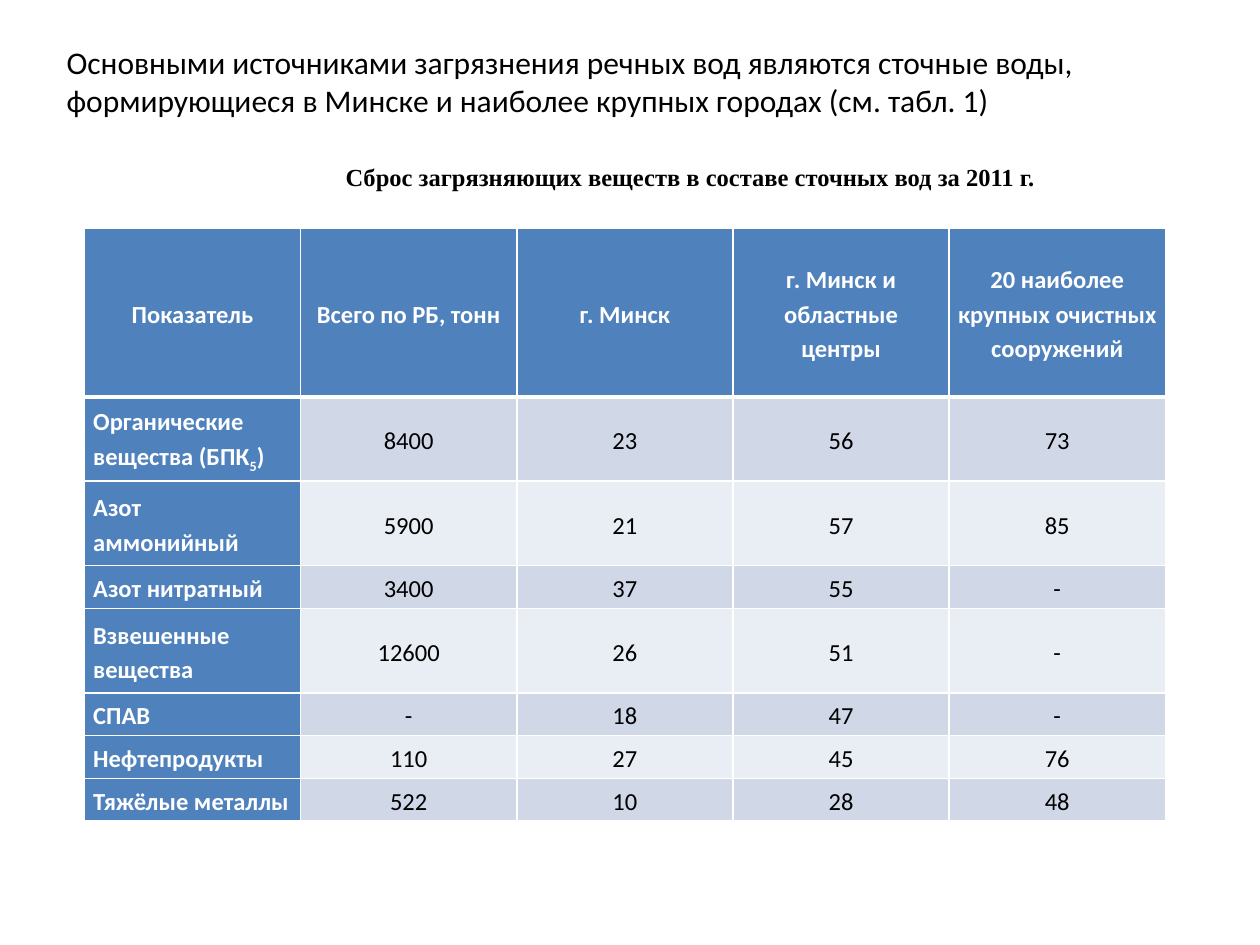
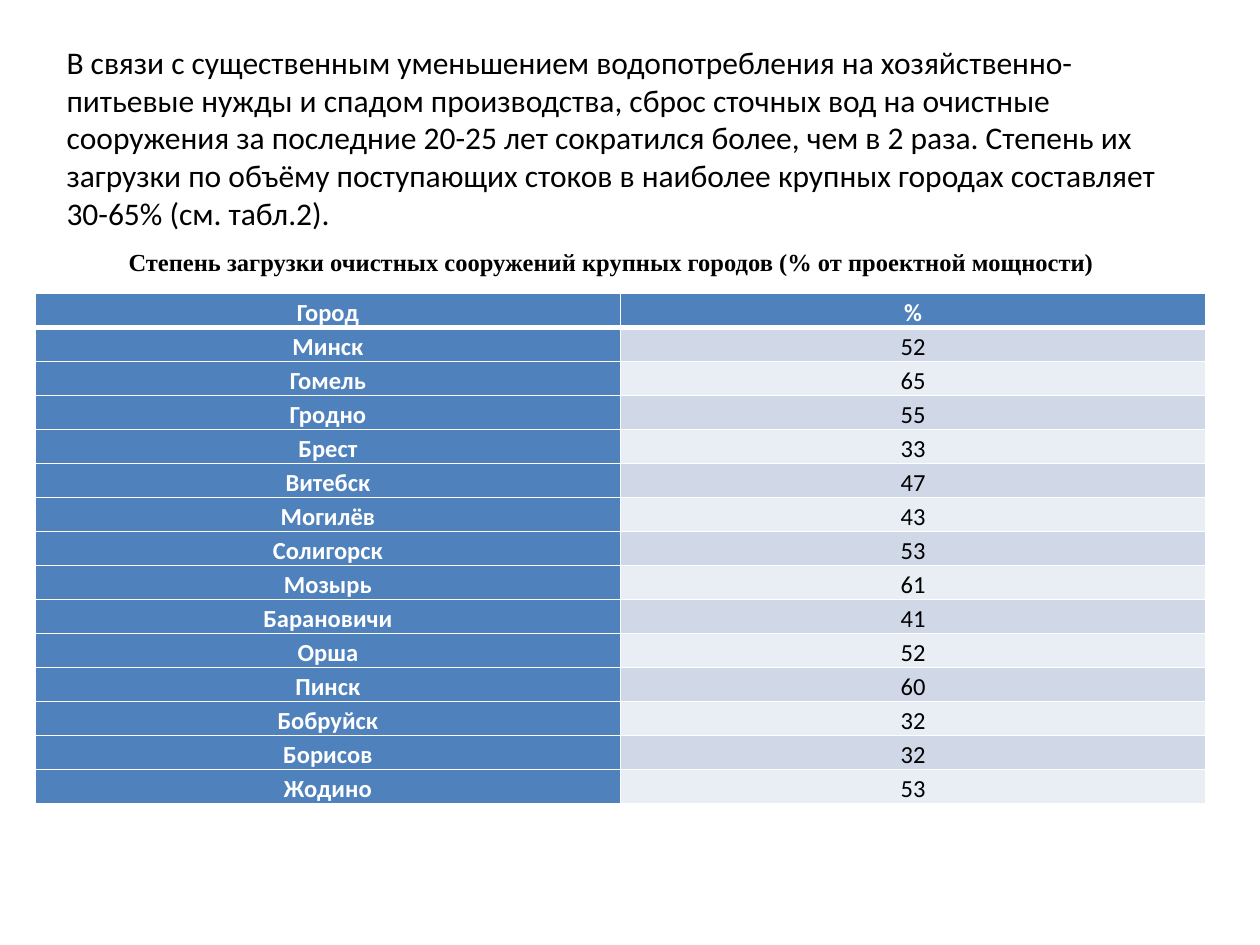
from dataclasses import dataclass

from lxml.etree import SubElement
from pptx import Presentation
from pptx.dml.color import RGBColor
from pptx.enum.text import MSO_ANCHOR as Anchor, MSO_AUTO_SIZE as AutoSize, PP_ALIGN as Align
from pptx.oxml.ns import qn
from pptx.util import Inches, Pt

COLORS = {
    "page": "FFFFFF",
    "text": "000000",
    "header": "4F81BD",
    "header_text": "FFFFFF",
    "band_dark": "D0D8E8",
    "band_light": "E9EDF4",
    "border": "FFFFFF",
}
BODY_FONT = "Calibri"
CAPTION_FONT = "Times New Roman"
LEAD_SIZE = 18
TABLE_SIZE = 14
LINE_SPACING = 1.15
SUBSCRIPT_MARK = "~"


@dataclass(frozen=True)
class Area:
    left: float
    top: float
    width: float
    height: float

    def lengths(self):
        return tuple(Inches(n) for n in (self.left, self.top, self.width, self.height))


@dataclass(frozen=True)
class Caption:
    text: str
    area: Area
    align: Align
    anchor: Anchor
    top_inset: float


@dataclass(frozen=True)
class DataTable:
    area: Area
    row_heights: list[float]
    rows: list[tuple]
    label_align: Align


@dataclass(frozen=True)
class TableSlide:
    lead: str
    lead_area: Area
    caption: Caption
    table: DataTable


DISCHARGE_ROWS = [
    ("Показатель", "Всего по РБ, тонн", "г. Минск", "г. Минск и областные центры",
     "20 наиболее крупных очистных сооружений"),
    ("Органические вещества (БПК~5~)", 8400, 23, 56, 73),
    ("Азот аммонийный", 5900, 21, 57, 85),
    ("Азот нитратный", 3400, 37, 55, "-"),
    ("Взвешенные вещества", 12600, 26, 51, "-"),
    ("СПАВ", "-", 18, 47, "-"),
    ("Нефтепродукты", 110, 27, 45, 76),
    ("Тяжёлые металлы", 522, 10, 28, 48),
]
LOAD_ROWS = [
    ("Город", "%"),
    ("Минск", 52),
    ("Гомель", 65),
    ("Гродно", 55),
    ("Брест", 33),
    ("Витебск", 47),
    ("Могилёв", 43),
    ("Солигорск", 53),
    ("Мозырь", 61),
    ("Барановичи", 41),
    ("Орша", 52),
    ("Пинск", 60),
    ("Бобруйск", 32),
    ("Борисов", 32),
    ("Жодино", 53),
]

SLIDES = [
    TableSlide(
        lead="Основными источниками загрязнения речных вод являются сточные воды, "
             "формирующиеся в Минске и наиболее крупных городах (см. табл. 1)",
        lead_area=Area(0.43, 0.29, 9.21, 0.71),
        caption=Caption("Сброс загрязняющих веществ в составе сточных вод за 2011 г.",
                        Area(1.22, 1.23, 8.03, 0.34), Align.CENTER, Anchor.MIDDLE, 0.05),
        table=DataTable(Area(0.67, 1.81, 8.58, 4.7),
                        [1.34, 0.67, 0.67, 0.34, 0.67, 0.34, 0.34, 0.34],
                        DISCHARGE_ROWS, Align.LEFT),
    ),
    TableSlide(
        lead="В связи с существенным уменьшением водопотребления на хозяйственно-питьевые нужды "
             "и спадом производства, сброс сточных вод на очистные сооружения за последние "
             "20-25 лет сократился более, чем в 2 раза. Степень их загрузки по объёму "
             "поступающих стоков в наиболее крупных городах составляет 30-65% (см. табл.2).",
        lead_area=Area(0.43, 0.29, 9.13, 1.62),
        caption=Caption("Степень загрузки очистных сооружений крупных городов "
                        "(% от проектной мощности)",
                        Area(0.43, 1.96, 9.13, 0.34), Align.LEFT, Anchor.TOP, 0),
        table=DataTable(Area(0.28, 2.33, 9.29, 4.03), [0.27] * len(LOAD_ROWS),
                        LOAD_ROWS, Align.CENTER),
    ),
]


def style_font(font, name: str, size: int, color: str, bold: bool = False) -> None:
    font.name = name
    font.size = Pt(size)
    font.bold = bold
    font.color.rgb = RGBColor.from_string(COLORS[color])


def add_lead(page, text: str, area: Area) -> None:
    frame = page.shapes.add_textbox(*area.lengths()).text_frame
    frame.word_wrap = True
    frame.text = text
    style_font(frame.paragraphs[0].runs[0].font, BODY_FONT, LEAD_SIZE, "text")


def place_caption(page, caption: Caption) -> None:
    title = page.shapes.title
    title.left, title.top, title.width, title.height = caption.area.lengths()
    frame = title.text_frame
    frame.text = caption.text
    frame.word_wrap = True
    frame.auto_size = AutoSize.NONE
    frame.vertical_anchor = caption.anchor
    frame.margin_top = frame.margin_bottom = Inches(caption.top_inset)
    para = frame.paragraphs[0]
    para.alignment = caption.align
    para._p.get_or_add_pPr().set("indent", str(Inches(0.49)))
    style_font(para.runs[0].font, CAPTION_FONT, TABLE_SIZE, "text", bold=True)


def set_borders(cell, top: int, bottom: int) -> None:
    """Draw all four cell edges; the side edges are 1 pt wide."""
    properties = cell._tc.get_or_add_tcPr()
    for edge, width in (("lnL", 1), ("lnR", 1), ("lnT", top), ("lnB", bottom)):
        line = SubElement(properties, qn(f"a:{edge}"), w=str(Pt(width)))
        fill = SubElement(line, qn("a:solidFill"))
        SubElement(fill, qn("a:srgbClr"), val=COLORS["border"])


def write_cell(cell, text: str, align: Align, is_heading: bool) -> None:
    """Write the text, lowering each part held between subscript marks."""
    cell.vertical_anchor = Anchor.MIDDLE
    cell.margin_left = cell.margin_right = Inches(0.07)
    cell.margin_top = cell.margin_bottom = 0
    para = cell.text_frame.paragraphs[0]
    para.alignment = align
    para.line_spacing = LINE_SPACING
    for index, part in enumerate(text.split(SUBSCRIPT_MARK)):
        span = para.add_run()
        span.text = part
        color = "header_text" if is_heading else "text"
        style_font(span.font, BODY_FONT, TABLE_SIZE, color, is_heading)
        if index % 2:
            span._r.get_or_add_rPr().set("baseline", "-25000")


def add_data_table(page, data: DataTable) -> None:
    column_count = len(data.rows[0])
    table = page.shapes.add_table(len(data.rows), column_count, *data.area.lengths()).table
    table.horz_banding = False
    for column in table.columns:
        column.width = Inches(data.area.width / column_count)
    for row_index, (height, values) in enumerate(zip(data.row_heights, data.rows)):
        table.rows[row_index].height = Inches(height)
        band = "band_dark" if row_index % 2 else "band_light"
        for column_index, value in enumerate(values):
            cell = table.cell(row_index, column_index)
            is_heading = row_index == 0 or column_index == 0
            is_label = row_index > 0 and column_index == 0
            set_borders(cell, top=3 if row_index == 1 else 1, bottom=3 if row_index == 0 else 1)
            cell.fill.solid()
            cell.fill.fore_color.rgb = RGBColor.from_string(
                COLORS["header" if is_heading else band])
            write_cell(cell, str(value), data.label_align if is_label else Align.CENTER,
                       is_heading)


def add_table_slide(deck, content: TableSlide) -> None:
    page = deck.slides.add_slide(deck.slide_layouts.get_by_name("Title Only"))
    page.background.fill.solid()
    page.background.fill.fore_color.rgb = RGBColor.from_string(COLORS["page"])
    add_lead(page, content.lead, content.lead_area)
    add_data_table(page, content.table)
    place_caption(page, content.caption)


def main() -> None:
    deck = Presentation()
    deck.slide_width, deck.slide_height = Inches(10), Inches(7.5)
    for content in SLIDES:
        add_table_slide(deck, content)
    deck.save("out.pptx")


if __name__ == "__main__":
    main()
